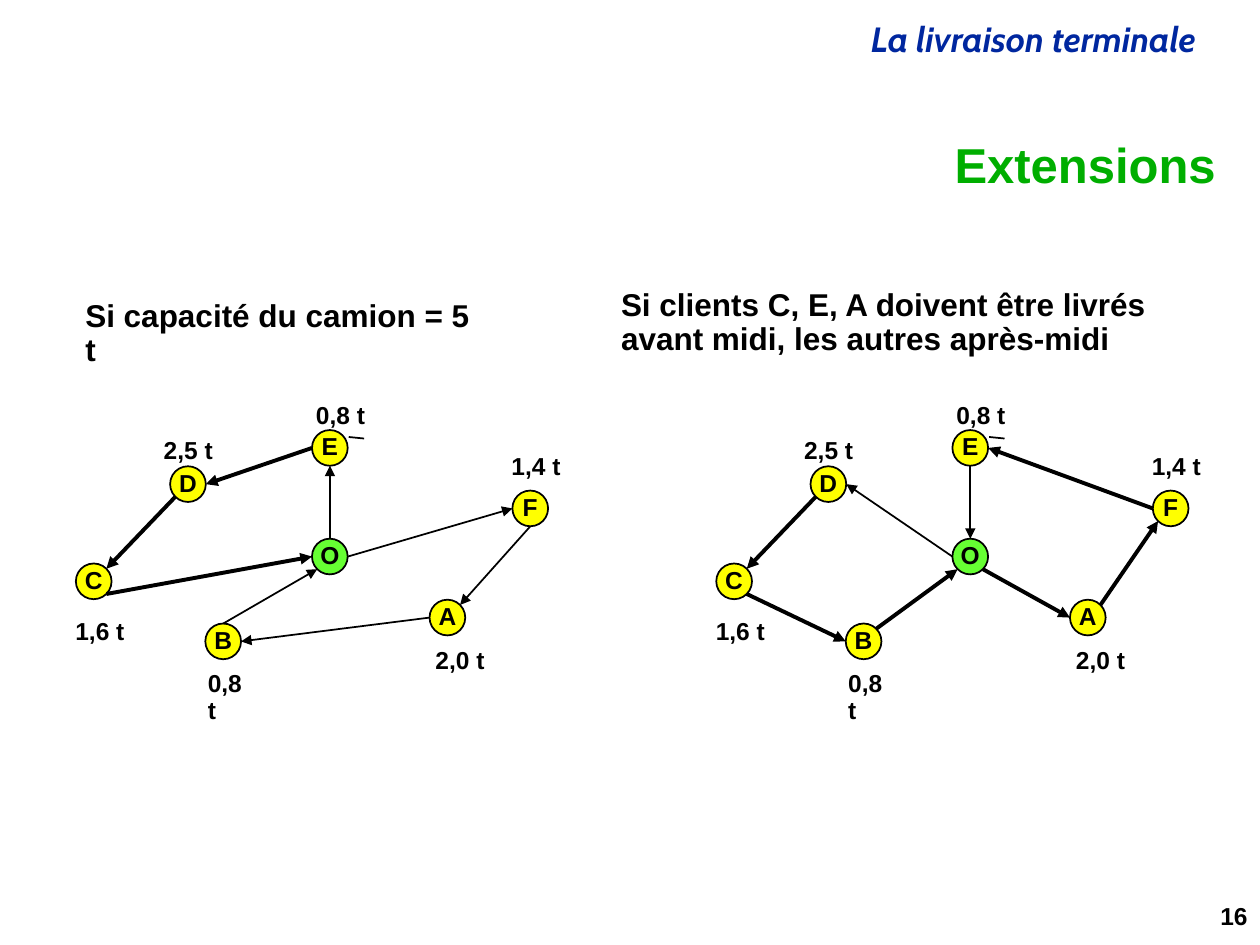
"""Build a slide comparing two delivery rounds drawn as node graphs."""
from math import sqrt

from lxml.etree import SubElement
from pptx import Presentation
from pptx.dml.color import RGBColor
from pptx.enum.shapes import MSO_CONNECTOR as CONN, MSO_SHAPE as SHAPE
from pptx.enum.text import MSO_ANCHOR as ANCHOR, PP_ALIGN as ALIGN
from pptx.oxml.ns import qn
from pptx.util import Cm, Pt

BLACK, YELLOW, GREEN = "000000", "FFFF00", "66FF33"
DIAMETER = 0.72
NODES = {
    "C": (1.89, 11.72), "D": (3.79, 9.76), "F": (10.69, 10.25),
    "E": (6.65, 9.03), "B": (4.5, 12.93), "A": (9.02, 12.45),
    "O": (6.65, 11.22),
}
LOADS = [
    ("2,0 t", 8.53, 12.95), ("0,8 t", 3.94, 13.41), ("1,6 t", 1.27, 12.37),
    ("2,5 t", 3.05, 8.71), ("0,8 t", 6.12, 8.0), ("1,4 t", 10.06, 9.04),
]
DIAG = sqrt(0.5)
SIDES = {
    "n": (0, -1), "s": (0, 1), "e": (1, 0), "w": (-1, 0),
    "ne": (DIAG, -DIAG), "se": (DIAG, DIAG), "sw": (-DIAG, DIAG),
}
CAPACITY_ROUTES = [
    ("E", "w", "D", "e", 2.25), ("D", "sw", "C", "ne", 2.25),
    ("C", "se", "O", "w", 2.25), ("O", "n", "E", "s", 1),
    ("O", "e", "F", "w", 1), ("F", "s", "A", "ne", 1),
    ("A", "w", "B", "e", 1), ("B", "n", "O", "sw", 1),
]
NOON_ROUTES = [
    ("F", "w", "E", "e", 2.25), ("D", "sw", "C", "ne", 2.25),
    ("C", "se", "B", "w", 2.25), ("B", "ne", "O", "sw", 2.25),
    ("O", "se", "A", "w", 2.25), ("A", "ne", "F", "sw", 2.25),
    ("E", "s", "O", "n", 1), ("O", "w", "D", "e", 1),
]


def rgb(color):
    return RGBColor.from_string(color)


class Deck:
    def __init__(self):
        self.prs = Presentation()
        self.prs.slide_width, self.prs.slide_height = Cm(25.4), Cm(19.05)
        self.s = self.prs.slides.add_slide(self.prs.slide_layouts[5])

    def fill_text(self, tf, text, size, color=BLACK, align=ALIGN.LEFT,
                  font="Arial", italic=False):
        tf.text = text
        for p in tf.paragraphs:
            p.alignment, p.line_spacing = align, 0.9
            p.space_before = Pt(0)
            p.font.name, p.font.size = font, Pt(size)
            p.font.bold, p.font.italic = True, italic
            p.font.color.rgb = rgb(color)

    def title(self, text, x, y, w, h):
        sp = self.s.shapes.title
        sp.left, sp.top, sp.width, sp.height = Cm(x), Cm(y), Cm(w), Cm(h)
        sp.text_frame.vertical_anchor = ANCHOR.MIDDLE
        self.fill_text(sp.text_frame, text, 28, "00AE00", ALIGN.RIGHT)

    def text(self, text, x, y, w, h, size, wrap=True, **style):
        sp = self.s.shapes.add_textbox(Cm(x), Cm(y), Cm(w), Cm(h))
        sp.text_frame.word_wrap = wrap
        self.fill_text(sp.text_frame, text, size, **style)

    def node(self, name, x, y, fill):
        r = DIAMETER / 2
        sp = self.s.shapes.add_shape(
            SHAPE.OVAL, Cm(x - r), Cm(y - r), Cm(DIAMETER), Cm(DIAMETER))
        sp.shadow.inherit = False
        sp.fill.solid()
        sp.fill.fore_color.rgb = rgb(fill)
        sp.line.color.rgb, sp.line.width = rgb(BLACK), Pt(1)
        tf = sp.text_frame
        tf.word_wrap, tf.vertical_anchor = False, ANCHOR.MIDDLE
        tf.margin_left = tf.margin_right = tf.margin_top = tf.margin_bottom = 0
        self.fill_text(tf, name, 14, align=ALIGN.CENTER)

    def line(self, x1, y1, x2, y2, width=1, arrow=False):
        cxn = self.s.shapes.add_connector(
            CONN.STRAIGHT, Cm(x1), Cm(y1), Cm(x2), Cm(y2))
        cxn.line.color.rgb, cxn.line.width = rgb(BLACK), Pt(width)
        sp_pr = cxn._element.spPr
        if arrow:
            SubElement(sp_pr.find(qn("a:ln")), qn("a:tailEnd"), type="triangle")
        SubElement(sp_pr, qn("a:effectLst"))

    def graph(self, dx, routes):
        for text, x, y in LOADS:
            wraps = y > 13
            self.text(text, x + dx, y, 1.4 if wraps else 1.5, 0.79, 14, wraps)
        x, y = NODES["E"]
        self.line(x + dx + 0.38, y - 0.22, x + dx + 0.69, y - 0.19)
        for name, (x, y) in NODES.items():
            self.node(name, x + dx, y, GREEN if name == "O" else YELLOW)
        for start, out, end, into, width in routes:
            x1, y1 = self.rim(start, out)
            x2, y2 = self.rim(end, into)
            self.line(x1 + dx, y1, x2 + dx, y2, width, arrow=True)

    def rim(self, name, side):
        return [c + u * DIAMETER / 2 for c, u in zip(NODES[name], SIDES[side])]


def main():
    deck = Deck()
    deck.text("La livraison terminale", 12.29, 0.33, 12.07, 1.02, 20,
              color="00279F", align=ALIGN.RIGHT, font="Cabin", italic=True)
    deck.text("16", 19.69, 18.11, 5.71, 1.02, 14, align=ALIGN.RIGHT)
    deck.title("Extensions", 2.97, 2.74, 21.79, 1.27)
    deck.graph(12.91, NOON_ROUTES)
    deck.graph(0, CAPACITY_ROUTES)
    deck.text("Si capacité du camion = 5 t", 1.47, 5.92, 8.5, 0.94, 18)
    deck.text("Si clients C, E, A doivent être livrés \vavant midi, "
              "les autres après-midi", 12.27, 5.7, 11.3, 1.63, 18, wrap=False)
    deck.prs.save("out.pptx")


if __name__ == "__main__":
    main()
